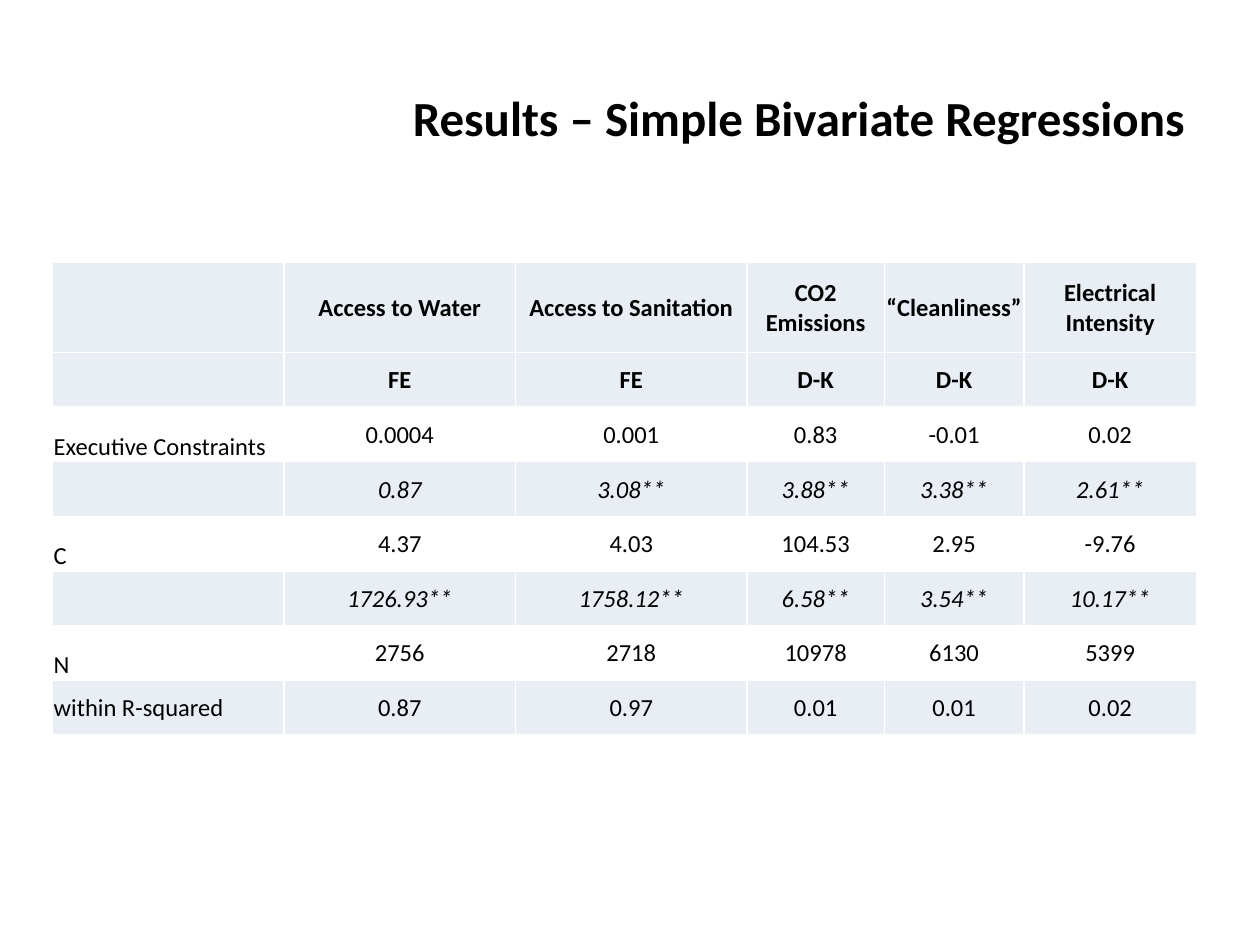
from lxml import etree
from pptx import Presentation
from pptx.dml.color import RGBColor
from pptx.enum.text import MSO_ANCHOR, PP_ALIGN
from pptx.oxml.ns import qn
from pptx.util import Pt

MIDDLE, BOTTOM = MSO_ANCHOR.MIDDLE, MSO_ANCHOR.BOTTOM
LEFT, CENTER, RIGHT = PP_ALIGN.LEFT, PP_ALIGN.CENTER, PP_ALIGN.RIGHT

FONT = "Calibri"
BLACK, WHITE, BAND = "000000", "FFFFFF", "E9EDF4"
TITLE = "Results – Simple Bivariate Regressions"
HEADER, ESTIMATE, STATISTIC, FIT = "header", "estimate", "statistic", "fit"
ROWS = [
    (HEADER, ["", "Access to Water", "Access to Sanitation", "CO2 Emissions",
              "“Cleanliness”", "Electrical Intensity"]),
    (HEADER, ["", "FE", "FE", "D-K", "D-K", "D-K"]),
    (ESTIMATE, ["Executive Constraints", "0.0004", "0.001", "0.83", "-0.01", "0.02"]),
    (STATISTIC, ["", "0.87", "3.08**", "3.88**", "3.38**", "2.61**"]),
    (ESTIMATE, ["C", "4.37", "4.03", "104.53", "2.95", "-9.76"]),
    (STATISTIC, ["", "1726.93**", "1758.12**", "6.58**", "3.54**", "10.17**"]),
    (ESTIMATE, ["N", "2756", "2718", "10978", "6130", "5399"]),
    (FIT, ["within R-squared", "0.87", "0.97", "0.01", "0.01", "0.02"]),
]
COLUMN_WIDTHS = [132.3, 132.3, 132.3, 78.5, 79.7, 98.7]
ROW_HEIGHTS = [51.5] + [31.2] * (len(ROWS) - 1)
TABLE_LEFT, TABLE_TOP = 30, 150


def color(value):
    return RGBColor.from_string(value)


def add_run(paragraph, text, size, bold=False, italic=False):
    run = paragraph.add_run()
    run.text = text
    font = run.font
    font.name, font.size, font.bold, font.italic = FONT, Pt(size), bold, italic
    font.color.rgb = color(BLACK)


def add_borders(cell):
    properties = cell._tc.get_or_add_tcPr()
    for side in ("a:lnL", "a:lnR", "a:lnT", "a:lnB"):
        line = etree.SubElement(properties, qn(side), w=str(Pt(1)))
        fill = etree.SubElement(line, qn("a:solidFill"))
        etree.SubElement(fill, qn("a:srgbClr"), val=WHITE)


def format_cell(cell, text, kind, is_label):
    add_borders(cell)
    cell.fill.solid()
    cell.fill.fore_color.rgb = color(WHITE if kind == ESTIMATE else BAND)
    cell.margin_left = cell.margin_right = cell.margin_top = Pt(0.7)
    cell.margin_bottom = Pt(0)
    cell.vertical_anchor = BOTTOM if is_label and kind == ESTIMATE else MIDDLE
    if text:
        paragraph = cell.text_frame.paragraphs[0]
        paragraph.alignment = LEFT if is_label else CENTER
        add_run(paragraph, text, 14, kind == HEADER, kind == STATISTIC)


def add_title(slide):
    title = slide.shapes.title
    title.left, title.top, title.width, title.height = Pt(36), Pt(21.6), Pt(648), Pt(90)
    title.text_frame.vertical_anchor = MIDDLE
    paragraph = title.text_frame.paragraphs[0]
    paragraph.alignment = RIGHT
    add_run(paragraph, TITLE, 28, bold=True)


def add_results_table(slide):
    table = slide.shapes.add_table(
        len(ROWS), len(COLUMN_WIDTHS), Pt(TABLE_LEFT), Pt(TABLE_TOP),
        Pt(sum(COLUMN_WIDTHS)), Pt(sum(ROW_HEIGHTS))).table
    table.first_row = table.horz_banding = False
    for column, width in zip(table.columns, COLUMN_WIDTHS):
        column.width = Pt(width)
    for row, height, (kind, texts) in zip(table.rows, ROW_HEIGHTS, ROWS):
        row.height = Pt(height)
        for index, (cell, text) in enumerate(zip(row.cells, texts)):
            format_cell(cell, text, kind, is_label=index == 0)


def main():
    presentation = Presentation()
    presentation.slide_width, presentation.slide_height = Pt(720), Pt(540)
    slide = presentation.slides.add_slide(presentation.slide_layouts[5])
    add_title(slide)
    add_results_table(slide)
    presentation.save("out.pptx")


if __name__ == "__main__":
    main()
